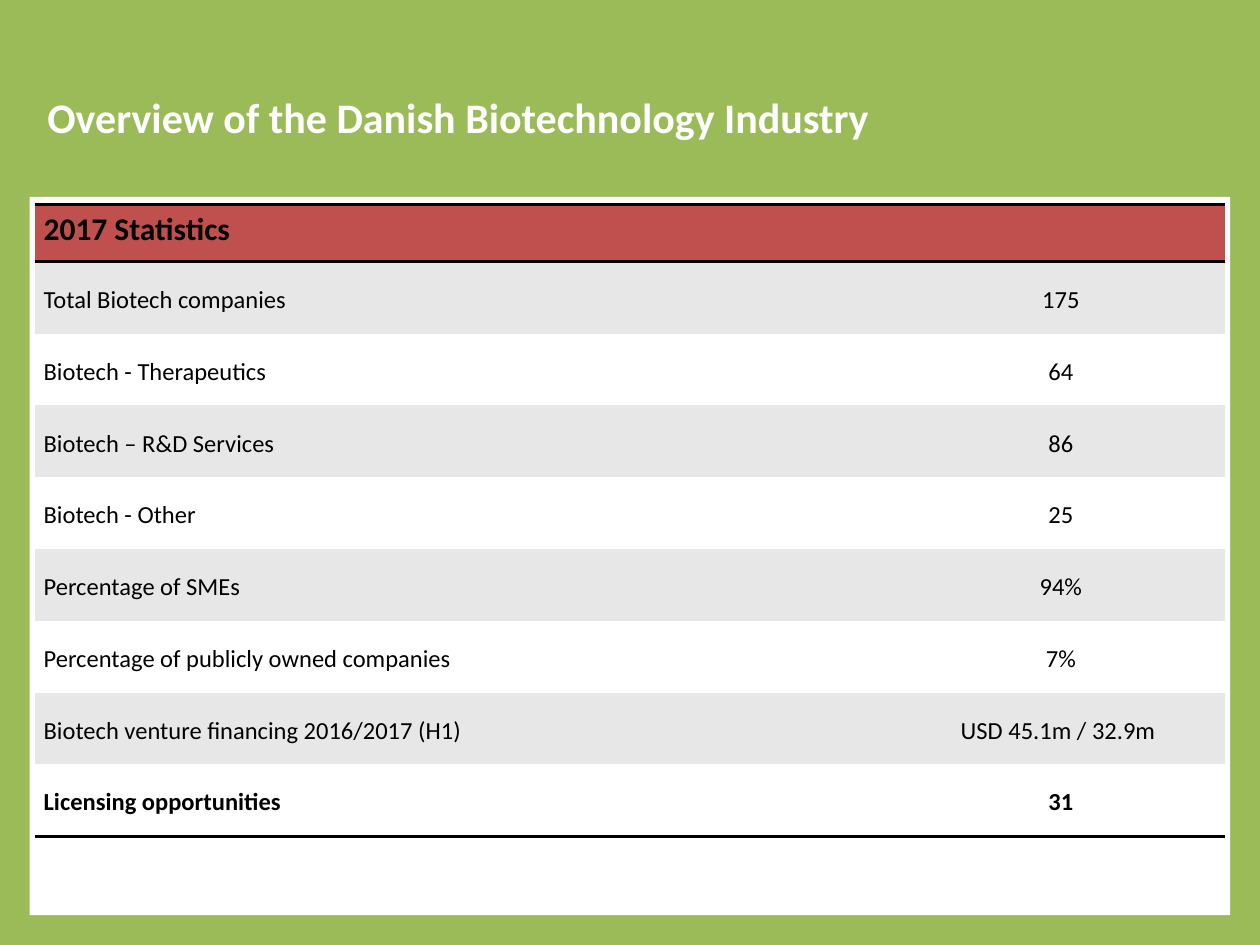
from lxml import etree
from pptx import Presentation
from pptx.dml.color import RGBColor
from pptx.enum.shapes import MSO_SHAPE
from pptx.enum.text import MSO_ANCHOR, PP_ALIGN
from pptx.oxml.ns import qn
from pptx.util import Cm, Pt

COLORS = {
    "background": "9BBB59",
    "white": "FFFFFF",
    "header": "C0504D",
    "band": "E7E7E7",
    "black": "000000",
}
FONT = "Calibri"
NO_STYLE = "{2D5ABB26-0587-4C30-8999-92F81FD0307C}"
TITLE = "Overview of the Danish Biotechnology Industry"
HEADING = "2017 Statistics"
STATISTICS = [
    ("Total Biotech companies", "175"),
    ("Biotech - Therapeutics", "64"),
    ("Biotech – R&D Services", "86"),
    ("Biotech - Other", "25"),
    ("Percentage of SMEs", "94%"),
    ("Percentage of publicly owned companies", "7%"),
    ("Biotech venture financing 2016/2017 (H1)", "USD 45.1m / 32.9m "),
    ("Licensing opportunities", "31"),
]


def rgb(name):
    """Return the named colour."""
    return RGBColor.from_string(COLORS[name])


def write(p, text, size, color, bold=False, align=PP_ALIGN.LEFT):
    """Add one formatted run to a paragraph."""
    p.alignment = align
    r = p.add_run()
    r.text = text
    r.font.name, r.font.size, r.font.bold = FONT, Pt(size), bold
    r.font.color.rgb = rgb(color)


def rule(cell, side):
    """Draw a black 2 pt border on the top (T) or bottom (B) of a cell."""
    ln = etree.Element(qn(f"a:ln{side}"), w=str(Pt(2)))
    fill = etree.SubElement(ln, qn("a:solidFill"))
    etree.SubElement(fill, qn("a:srgbClr"), val=COLORS["black"])
    cell._tc.get_or_add_tcPr().insert(0, ln)


def fill_cell(cell, text, fill, size=14, bold=False, align=PP_ALIGN.LEFT,
              anchor=MSO_ANCHOR.MIDDLE):
    """Set the margins, fill and text of a table cell."""
    cell.margin_left = cell.margin_right = Cm(0.18)
    cell.margin_top = cell.margin_bottom = 0
    cell.vertical_anchor = anchor
    cell.fill.solid()
    cell.fill.fore_color.rgb = rgb(fill)
    p = cell.text_frame.paragraphs[0]
    p.line_spacing = 1.15
    write(p, text, size, "black", bold, align)


def add_title(slide, left, top, width, height):
    """Place and format the title placeholder."""
    sp = slide.shapes.title
    sp.left, sp.top, sp.width, sp.height = left, top, width, height
    tf = sp.text_frame
    tf.word_wrap = True
    tf.vertical_anchor = MSO_ANCHOR.MIDDLE
    write(tf.paragraphs[0], TITLE, 24, "white", True)


def add_panel(slide, left, top, width, height):
    """Add the white panel behind the table."""
    sp = slide.shapes.add_shape(MSO_SHAPE.RECTANGLE, left, top, width, height)
    sp.shadow.inherit = False
    sp.fill.solid()
    sp.fill.fore_color.rgb = rgb("white")
    sp.line.fill.background()


def add_statistics(slide, left, top, width, height):
    """Add the table of statistics with a merged heading row."""
    table = slide.shapes.add_table(
        len(STATISTICS) + 1, 2, left, top, width, height).table
    table.first_row = table.horz_banding = False
    table._tbl.tblPr.find(qn("a:tableStyleId")).text = NO_STYLE
    table.columns[0].width = Cm(17.37)
    table.columns[1].width = width - Cm(17.37)

    heading_height = Cm(1.16)
    table.rows[0].height = heading_height
    heading = table.cell(0, 0)
    heading.merge(table.cell(0, 1))
    fill_cell(heading, HEADING, "header", 18, True, anchor=MSO_ANCHOR.TOP)
    for cell in table.rows[0].cells:
        rule(cell, "B")
        rule(cell, "T")

    last = len(STATISTICS)
    for i, values in enumerate(STATISTICS, 1):
        table.rows[i].height = (height - heading_height) // last
        fill = "band" if i % 2 else "white"
        for j, text in enumerate(values):
            cell = table.cell(i, j)
            align = PP_ALIGN.CENTER if j else PP_ALIGN.LEFT
            fill_cell(cell, text, fill, bold=i == last, align=align)
            if i == last:
                rule(cell, "B")


def main():
    """Build and save the slide."""
    prs = Presentation()
    prs.slide_width, prs.slide_height = Cm(25.4), Cm(19.05)
    slide = prs.slides.add_slide(prs.slide_layouts[5])
    slide.background.fill.solid()
    slide.background.fill.fore_color.rgb = rgb("background")
    add_panel(slide, Cm(0.6), Cm(3.97), Cm(24.2), Cm(14.48))
    add_title(slide, Cm(0.7), Cm(0.76), Cm(22.86), Cm(3.18))
    add_statistics(slide, Cm(0.7), Cm(4.12), Cm(24), Cm(12.74))
    prs.save("out.pptx")


if __name__ == "__main__":
    main()
